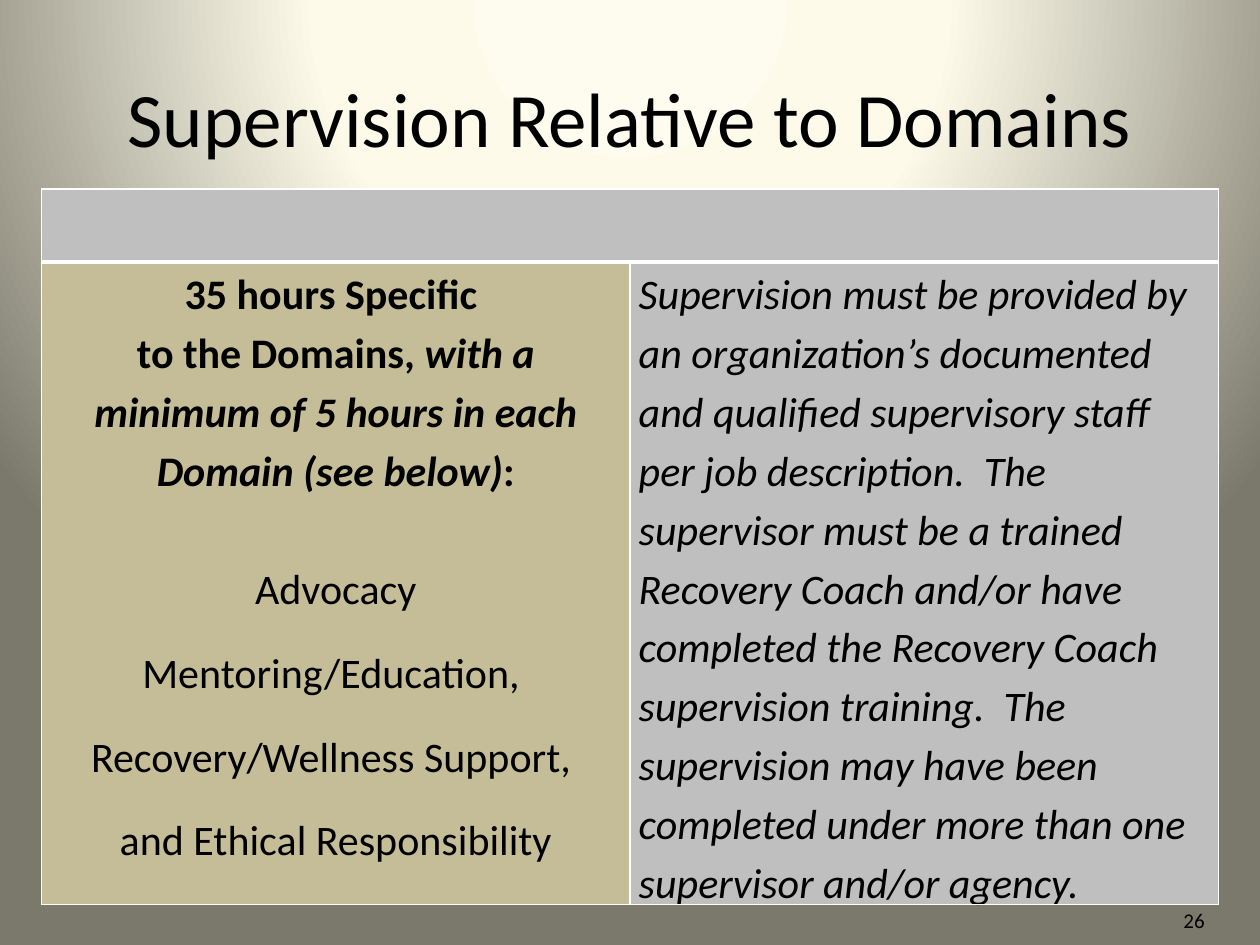
import pptx
import pptx.dml.color
import pptx.enum.text
import pptx.oxml
import pptx.oxml.ns
import pptx.util
from pptx.util import Inches

RGBColor = pptx.dml.color.RGBColor
ALIGN = pptx.enum.text.PP_ALIGN
MIDDLE = pptx.enum.text.MSO_ANCHOR.MIDDLE

BLACK = RGBColor(0x00, 0x00, 0x00)
WHITE = RGBColor(0xFF, 0xFF, 0xFF)
GREY = RGBColor(0xBF, 0xBF, 0xBF)
TAN = RGBColor(0xC4, 0xBD, 0x97)
BACKDROP = [(0, RGBColor(0xFE, 0xFC, 0xEE)), (40, RGBColor(0xFD, 0xFA, 0xEA)),
            (100, RGBColor(0x7B, 0x79, 0x6B))]

TITLE = "Supervision Relative to Domains"
PAGE_NUMBER = "26"
# Each paragraph: space before in points, then (text, format) spans
REQUIREMENT = [
    (0, [("35 hours Specific ", {"bold": True})]),
    (0, [("to the Domains, ", {"bold": True}),
         ("with a minimum of 5 hours in each Domain (see below)",
          {"bold": True, "italic": True}),
         (":", {"bold": True})]),
    (33.7, [("Advocacy", {})]),
    (14.7, [("Mentoring/Education, ", {})]),
    (14, [("Recovery/Wellness Support, ", {})]),
    (14, [("and Ethical Responsibility", {})]),
]
SUPERVISOR = [(0, [(
    "Supervision must be provided by an organization’s documented and qualified "
    "supervisory staff per job description.  The supervisor must be a trained "
    "Recovery Coach and/or have completed the Recovery Coach supervision training.  "
    "The supervision may have been completed under more than one supervisor "
    "and/or agency.", {"italic": True})])]
COLUMN_WIDTH = 4.67
ROW_HEIGHTS = [0.58, 5.1]

DRAWING = pptx.oxml.ns.nsdecls("a")


def add_span(para, text, size=24, bold=False, italic=False, color=BLACK):
    span = para.add_run()
    span.text = text
    font = span.font
    font.name, font.size = "Calibri", pptx.util.Pt(size)
    font.bold, font.italic = bold, italic
    font.color.rgb = color


def add_label(page, text, left, top, width, height, align, size):
    box = page.shapes.add_textbox(*map(Inches, (left, top, width, height)))
    frame = box.text_frame
    frame.word_wrap = True
    frame.vertical_anchor = MIDDLE
    para = frame.paragraphs[0]
    para.alignment = align
    add_span(para, text, size=size)


def fill_background(page):
    stops = "".join(f'<a:gs pos="{percent * 1000}"><a:srgbClr val="{color}"/></a:gs>'
                    for percent, color in BACKDROP)
    background = pptx.oxml.parse_xml(
        f'<p:bg {pptx.oxml.ns.nsdecls("p", "a")}><p:bgPr>'
        f'<a:gradFill rotWithShape="1"><a:gsLst>{stops}</a:gsLst><a:path path="circle">'
        '<a:fillToRect l="50000" t="-80000" r="50000" b="180000"/></a:path></a:gradFill>'
        '<a:effectLst/></p:bgPr></p:bg>')
    page.element.cSld.insert(0, background)


def style_cell(cell, fill, **edge_points):
    """Fill the cell and rule its edges, 1 point wide unless edge_points differs."""
    cell.fill.solid()
    cell.fill.fore_color.rgb = fill
    properties = cell._tc.get_or_add_tcPr()
    for index, edge in enumerate("LRTB"):
        width = pptx.util.Pt(edge_points.get(edge, 1))
        properties.insert(index, pptx.oxml.parse_xml(
            f'<a:ln{edge} {DRAWING} w="{width}"><a:solidFill>'
            f'<a:srgbClr val="{WHITE}"/></a:solidFill></a:ln{edge}>'))


def write_cell(cell, paragraphs, align):
    cell.margin_left = cell.margin_right = Inches(0.07)
    cell.margin_top = cell.margin_bottom = 0
    frame = cell.text_frame
    for index, (space, spans) in enumerate(paragraphs):
        para = frame.add_paragraph() if index else frame.paragraphs[0]
        para.alignment = align
        para.line_spacing = 1.15
        if space:
            para.space_before = pptx.util.Pt(space)
        for text, style in spans:
            add_span(para, text, **style)


def add_domain_table(page):
    table = page.shapes.add_table(
        2, 2, Inches(0.33), Inches(1.5),
        Inches(2 * COLUMN_WIDTH), Inches(sum(ROW_HEIGHTS))).table
    for column in table.columns:
        column.width = Inches(COLUMN_WIDTH)
    for row, height in zip(table.rows, ROW_HEIGHTS):
        row.height = Inches(height)
    for column in range(2):
        style_cell(table.cell(0, column), GREY, B=3)
    table.cell(0, 0).merge(table.cell(0, 1))
    body = [(REQUIREMENT, TAN, ALIGN.CENTER), (SUPERVISOR, GREY, ALIGN.LEFT)]
    for column, (paragraphs, fill, align) in enumerate(body):
        cell = table.cell(1, column)
        style_cell(cell, fill, T=3)
        write_cell(cell, paragraphs, align)


def main():
    deck = pptx.Presentation()
    deck.slide_width, deck.slide_height = Inches(10), Inches(7.5)
    page = deck.slides.add_slide(deck.slide_layouts[6])
    fill_background(page)
    add_label(page, TITLE, 0.5, 0.3, 9, 1.25, ALIGN.CENTER, 44)
    add_domain_table(page)
    add_label(page, PAGE_NUMBER, 7.33, 7.1, 2.33, 0.4, ALIGN.RIGHT, 12)
    deck.save("out.pptx")


if __name__ == "__main__":
    main()
